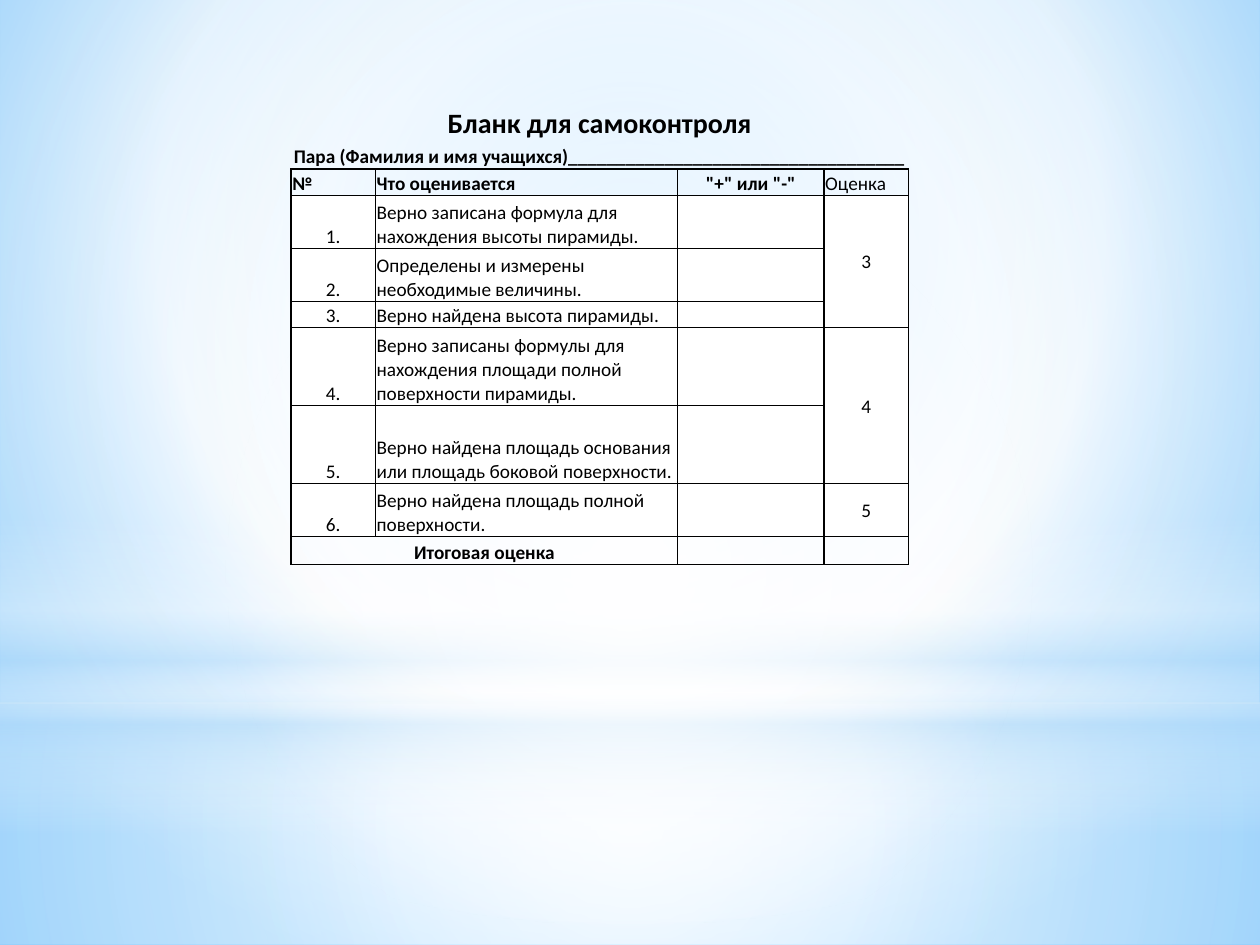
from lxml.etree import SubElement
from pptx import Presentation
from pptx.dml.color import RGBColor
from pptx.enum.shapes import MSO_SHAPE
from pptx.enum.text import MSO_ANCHOR, PP_ALIGN
from pptx.oxml.ns import qn
from pptx.util import Inches, Pt

COLORS = {"ink": "000000", "paper": "FFFFFF", "sky": "B4DCFA",
          "pale": "9ED5FF", "deep": "5BB9FF"}
FONT = "Calibri"
NO_STYLE = "{2D5ABB26-0587-4C30-8999-92F81FD0307C}"
CENTER = (50, 50, 50, 50)

# Gradient stops: position, colour, opacity (all in percent)
BACKGROUND = [(0, "pale", 100), (60, "paper", 100), (100, "deep", 100)]
# Shape, top, height, stops, focus (None for a vertical gradient)
LAYERS = [
    (MSO_SHAPE.RECTANGLE, 5.58, 1.92,
     [(0, "paper", 91), (37, "paper", 76), (100, "sky", 79)], CENTER),
    (MSO_SHAPE.RECTANGLE, 0, 5.58,
     [(0, "paper", 89), (48, "paper", 62), (100, "sky", 79)], CENTER),
    (MSO_SHAPE.RECTANGLE, 4.12, 2.5,
     [(0, "paper", 0), (29, "paper", 30), (45, "sky", 40), (55, "paper", 26),
      (65, "sky", 60), (100, "paper", 0)], None),
    (MSO_SHAPE.OVAL, 1.75, 5.58, [(0, "paper", 100), (56, "paper", 0)], CENTER),
]

TITLE = "Бланк для самоконтроля"
PAIR_LINE = "Пара (Фамилия и имя учащихся)" + "_" * 35
HEADERS = ["№", "Что оценивается", "\"+\" или \"-\"", "Оценка"]
CRITERIA = [
    "Верно записана формула для нахождения высоты пирамиды.",
    "Определены и измерены необходимые величины.",
    "Верно найдена высота пирамиды.",
    "Верно записаны формулы для нахождения площади полной поверхности пирамиды.",
    "Верно найдена площадь основания или площадь боковой поверхности.",
    "Верно найдена площадь полной поверхности.",
]
GRADES = [("3", 3), ("4", 2), ("5", 1)]  # grade, number of criteria it covers
TOTAL = "Итоговая оценка"
COLUMN_WIDTHS = [0.67, 2.4, 1.16, 0.67]
ROW_HEIGHTS = [0.21, 0.22, 0.21, 0.42, 0.42, 0.21, 0.62, 0.62, 0.42, 0.22]
HEADER_ROW, FIRST_ROW, TOTAL_ROW = 2, 3, 9
GRADE_COLUMN = 3


def set_gradient(element, stops, focus):
    """Replace the solid fill inside element with a gradient."""
    solid = next(element.iter(qn("a:solidFill")))
    gradient = solid.makeelement(qn("a:gradFill"), {"rotWithShape": "1"})
    stop_list = SubElement(gradient, qn("a:gsLst"))
    for position, color, opacity in stops:
        stop = SubElement(stop_list, qn("a:gs"), pos=str(position * 1000))
        tint = SubElement(stop, qn("a:srgbClr"), val=COLORS[color])
        if opacity < 100:
            SubElement(tint, qn("a:alpha"), val=str(opacity * 1000))
    if focus:
        circle = SubElement(gradient, qn("a:path"), {"path": "circle"})
        edges = {side: str(share * 1000) for side, share in zip("ltrb", focus)}
        SubElement(circle, qn("a:fillToRect"), edges)
    else:
        SubElement(gradient, qn("a:lin"), ang="5400000", scaled="0")
    solid.getparent().replace(solid, gradient)


def write(cell, text, size=11, bold=False, align=PP_ALIGN.LEFT, anchor=MSO_ANCHOR.BOTTOM):
    cell.vertical_anchor = anchor
    para = cell.text_frame.paragraphs[0]
    para.alignment = align
    span = para.add_run()
    span.text = text
    span.font.name, span.font.size, span.font.bold = FONT, Pt(size), bold
    span.font.color.rgb = RGBColor.from_string(COLORS["ink"])


def draw_border(cell, side, width):
    line = SubElement(cell._tc.get_or_add_tcPr(), qn(f"a:ln{side}"), w=str(Pt(width)))
    fill = SubElement(line, qn("a:solidFill"))
    SubElement(fill, qn("a:srgbClr"), val=COLORS["ink"])


def format_cell(cell, row, column):
    """Set margins, borders and fill by the place in the grid."""
    cell.margin_left = cell.margin_right = cell.margin_top = Inches(0.01)
    cell.margin_bottom = 0
    if row >= HEADER_ROW:
        heavy = {"L": column in (0, GRADE_COLUMN), "R": column >= 2,
                 "T": row == HEADER_ROW, "B": row == TOTAL_ROW}
        sides = "LRTB"
        if cell.is_spanned:
            sides = "RB" if row == TOTAL_ROW else "R"
        for side in sides:
            draw_border(cell, side, 1 if heavy[side] else 0.5)
    if FIRST_ROW <= row < TOTAL_ROW:
        cell.fill.solid()
        cell.fill.fore_color.rgb = RGBColor.from_string(COLORS["paper"])
    else:
        cell.fill.background()
    if not cell.text_frame.text:  # keeps empty cells from stretching their row
        para = cell.text_frame.paragraphs[0]
        SubElement(para._p, qn("a:endParaRPr"), sz="1100")


def add_backdrop(page, width):
    page.background.fill.solid()
    set_gradient(page._element.cSld, BACKGROUND, (20, 10, 20, 60))
    for kind, top, height, stops, focus in LAYERS:
        layer = page.shapes.add_shape(kind, 0, Inches(top), width, Inches(height))
        layer.shadow.inherit = False
        layer.line.fill.background()
        layer.fill.solid()
        set_gradient(layer._element.spPr, stops, focus)


def add_form(page):
    frame = page.shapes.add_table(
        len(ROW_HEIGHTS), len(COLUMN_WIDTHS), Inches(2.31), Inches(0.84),
        Inches(sum(COLUMN_WIDTHS)), Inches(sum(ROW_HEIGHTS)))
    table = frame.table
    table.first_row = table.horz_banding = False
    next(table._tbl.iter(qn("a:tableStyleId"))).text = NO_STYLE
    for column, width in zip(table.columns, COLUMN_WIDTHS):
        column.width = Inches(width)
    for row, height in zip(table.rows, ROW_HEIGHTS):
        row.height = Inches(height)

    center, middle = PP_ALIGN.CENTER, MSO_ANCHOR.MIDDLE
    for row in (0, 1):
        table.cell(row, 0).merge(table.cell(row, GRADE_COLUMN))
    write(table.cell(0, 0), TITLE, size=16, bold=True, align=center, anchor=middle)
    write(table.cell(1, 0), PAIR_LINE, bold=True, align=center)
    for column, header in enumerate(HEADERS):
        write(table.cell(HEADER_ROW, column), header, bold=column != GRADE_COLUMN,
              align=center if column == 2 else PP_ALIGN.LEFT)
    for number, criterion in enumerate(CRITERIA, 1):
        row = HEADER_ROW + number
        write(table.cell(row, 0), f"{number}.", align=center)
        write(table.cell(row, 1), criterion)
    row = FIRST_ROW
    for grade, count in GRADES:
        cell = table.cell(row, GRADE_COLUMN)
        if count > 1:
            cell.merge(table.cell(row + count - 1, GRADE_COLUMN))
        write(cell, grade, align=center, anchor=middle)
        row += count
    table.cell(TOTAL_ROW, 0).merge(table.cell(TOTAL_ROW, 1))
    write(table.cell(TOTAL_ROW, 0), TOTAL, bold=True, align=center)

    for row in range(len(ROW_HEIGHTS)):
        for column in range(len(COLUMN_WIDTHS)):
            format_cell(table.cell(row, column), row, column)


def main():
    deck = Presentation()
    deck.slide_width, deck.slide_height = Inches(10), Inches(7.5)
    page = deck.slides.add_slide(deck.slide_layouts[6])
    add_backdrop(page, deck.slide_width)
    add_form(page)
    deck.save("out.pptx")


if __name__ == "__main__":
    main()
